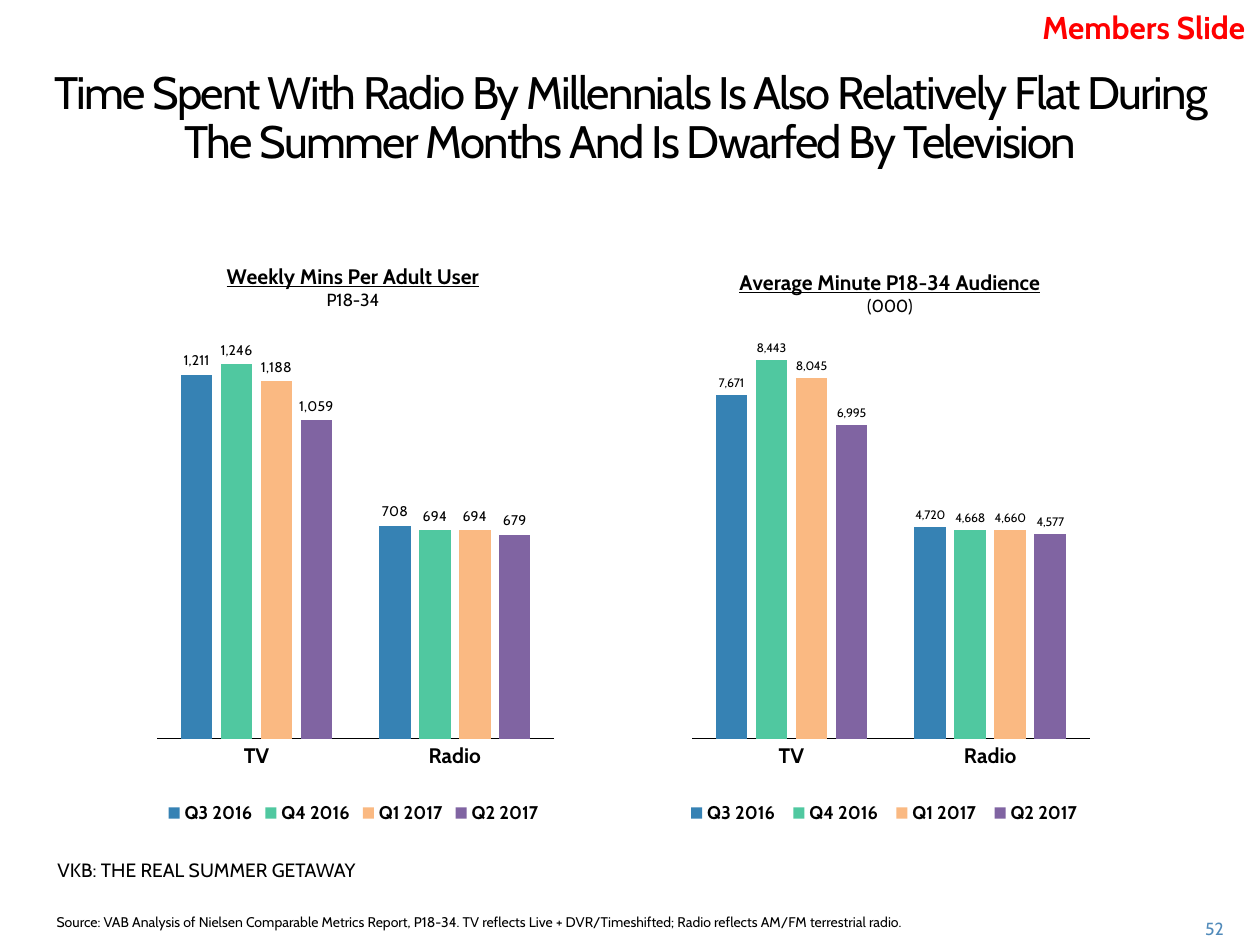
from dataclasses import dataclass

from lxml.etree import SubElement
from pptx import Presentation
from pptx.chart.data import CategoryChartData
from pptx.dml.color import RGBColor
from pptx.enum.chart import XL_CHART_TYPE, XL_LABEL_POSITION, XL_LEGEND_POSITION, XL_TICK_MARK
from pptx.enum.text import PP_ALIGN
from pptx.oxml.ns import qn
from pptx.util import Cm, Pt


@dataclass(frozen=True)
class Theme:
    font: str = "Cabin"
    black: str = "000000"
    red: str = "FF0000"
    page_blue: str = "508ABA"
    quarters: tuple = ("3682B4", "50C8A0", "FAB982", "8064A2")
    headline: float = 26
    headline_leading: float = 28
    tag: float = 18
    chart_heading: float = 12
    chart_text: float = 10
    legend: float = 10.5
    footer: float = 11
    page: float = 10
    source: float = 8


class SlideBuilder:
    def __init__(self, slide, theme):
        self.slide = slide
        self.theme = theme

    def style(self, font, size, color=None, bold=False):
        font.name = self.theme.font
        font.size = Pt(size)
        font.bold = bold
        font.color.rgb = RGBColor.from_string(color or self.theme.black)

    def text(self, box, words, size, color=None, bold=False,
             align=PP_ALIGN.LEFT, leading=None, tracking=None):
        frame = self.slide.shapes.add_textbox(*map(Cm, box)).text_frame
        frame.word_wrap = True
        paragraph = frame.paragraphs[0]
        paragraph.alignment = align
        run = paragraph.add_run()
        run.text = words
        self.style(paragraph.font, size, color, bold)
        if leading:
            paragraph.line_spacing = Pt(leading)
        if tracking:
            run._r.get_or_add_rPr().set("spc", str(tracking * 100))

    def place(self, parent, after, x, y, width=None, height=None, inner=False):
        """Lay out a chart part in fractions of the chart's size."""
        for old in parent.findall(qn("c:layout")):
            parent.remove(old)
        layout = SubElement(parent, qn("c:layout"))
        manual = SubElement(layout, qn("c:manualLayout"))
        settings = [("xMode", "edge"), ("yMode", "edge"),
                    ("x", x), ("y", y), ("w", width), ("h", height)]
        if inner:
            settings.insert(0, ("layoutTarget", "inner"))
        for tag, value in settings:
            if value is not None:
                SubElement(manual, qn(f"c:{tag}")).set("val", str(value))
        if after:
            parent.find(qn(after)).addnext(layout)
        else:
            parent.insert(0, layout)

    def column_chart(self, box, heading, unit, quarters, maximum, label_size,
                     heading_at, plot_at, legend_at):
        theme = self.theme
        data = CategoryChartData(number_format="#,##0")
        data.categories = ["TV", "Radio"]
        for quarter, minutes in quarters.items():
            data.add_series(quarter, minutes)
        chart = self.slide.shapes.add_chart(
            XL_CHART_TYPE.COLUMN_CLUSTERED, *map(Cm, box), data).chart
        self.style(chart.font, theme.chart_text)

        # Heading
        title = chart.chart_title
        first = title.text_frame.paragraphs[0]
        first.text = heading
        self.style(first.font, theme.chart_heading, bold=True)
        first.font.underline = True
        second = title.text_frame.add_paragraph()
        second.text = unit
        self.style(second.font, theme.chart_text)
        self.place(title._element, "c:tx", *heading_at)

        # Axes
        category_axis, value_axis = chart.category_axis, chart.value_axis
        category_axis.major_tick_mark = XL_TICK_MARK.NONE
        category_axis.format.line.color.rgb = RGBColor.from_string(theme.black)
        category_axis.format.line.width = Pt(0.75)
        self.style(category_axis.tick_labels.font, theme.chart_heading, bold=True)
        value_axis.minimum_scale = 0
        value_axis.maximum_scale = maximum
        value_axis.has_major_gridlines = False
        value_axis.visible = False

        # Columns
        plot = chart.plots[0]
        plot.vary_by_categories = False
        plot.gap_width = 150
        plot.overlap = -27
        for series, color in zip(plot.series, theme.quarters):
            series.format.fill.solid()
            series.format.fill.fore_color.rgb = RGBColor.from_string(color)
            labels = series.data_labels
            labels.show_value = True
            labels.number_format = "#,##0"
            labels.number_format_is_linked = False
            labels.position = XL_LABEL_POSITION.OUTSIDE_END
            self.style(labels.font, label_size)
        self.place(chart._chartSpace.chart.plotArea, None, *plot_at, inner=True)

        # Legend
        chart.has_legend = True
        chart.legend.position = XL_LEGEND_POSITION.BOTTOM
        chart.legend.include_in_layout = False
        self.style(chart.legend.font, theme.legend, bold=True)
        self.place(chart.legend._element, "c:legendPos", *legend_at)


def main():
    deck = Presentation()
    deck.slide_width, deck.slide_height = Cm(25.4), Cm(19.05)
    theme = Theme()
    builder = SlideBuilder(deck.slides.add_slide(deck.slide_layouts[6]), theme)

    # Headline and tag
    builder.text((0.48, 1.27, 24.46, 2.06),
                 "Time Spent With Radio By Millennials Is Also Relatively Flat During "
                 "The Summer Months And Is Dwarfed By Television",
                 theme.headline, align=PP_ALIGN.CENTER,
                 leading=theme.headline_leading, tracking=-1)
    builder.text((20.5, 0.03, 4.85, 1.02), "Members Slide", theme.tag,
                 theme.red, bold=True, align=PP_ALIGN.RIGHT)

    # Charts
    builder.column_chart(
        (2.82, 4.85, 8.79, 11.96), "Weekly Mins Per Adult User", "P18-34",
        {"Q3 2016": (1211, 708), "Q4 2016": (1246, 694),
         "Q1 2017": (1188, 694), "Q2 2017": (1059, 679)},
        maximum=1400, label_size=8, heading_at=(0.19, 0.03),
        plot_at=(0.04, 0.13, 0.91, 0.71), legend_at=(0.05, 0.94, 0.88, 0.05))
    builder.column_chart(
        (13.51, 4.85, 8.81, 11.96), "Average Minute P18-34 Audience", "(000)",
        {"Q3 2016": (7671, 4720), "Q4 2016": (8443, 4668),
         "Q1 2017": (8045, 4660), "Q2 2017": (6995, 4577)},
        maximum=9000, label_size=7, heading_at=(0.15, 0.04),
        plot_at=(0.05, 0.16, 0.91, 0.68), legend_at=(0.02, 0.94, 0.94, 0.05))

    # Footer
    builder.text((0.91, 17.17, 6.63, 1.19), "VKB: THE REAL SUMMER GETAWAY", theme.footer)
    builder.text((0.89, 18.29, 19.84, 0.66),
                 "Source: VAB Analysis of Nielsen Comparable Metrics Report, P18-34. "
                 "TV reflects Live + DVR/Timeshifted; Radio reflects AM/FM terrestrial radio.",
                 theme.source)
    builder.text((23.37, 18.39, 1.55, 0.64), "52", theme.page,
                 theme.page_blue, align=PP_ALIGN.RIGHT)

    deck.save("out.pptx")


if __name__ == "__main__":
    main()
